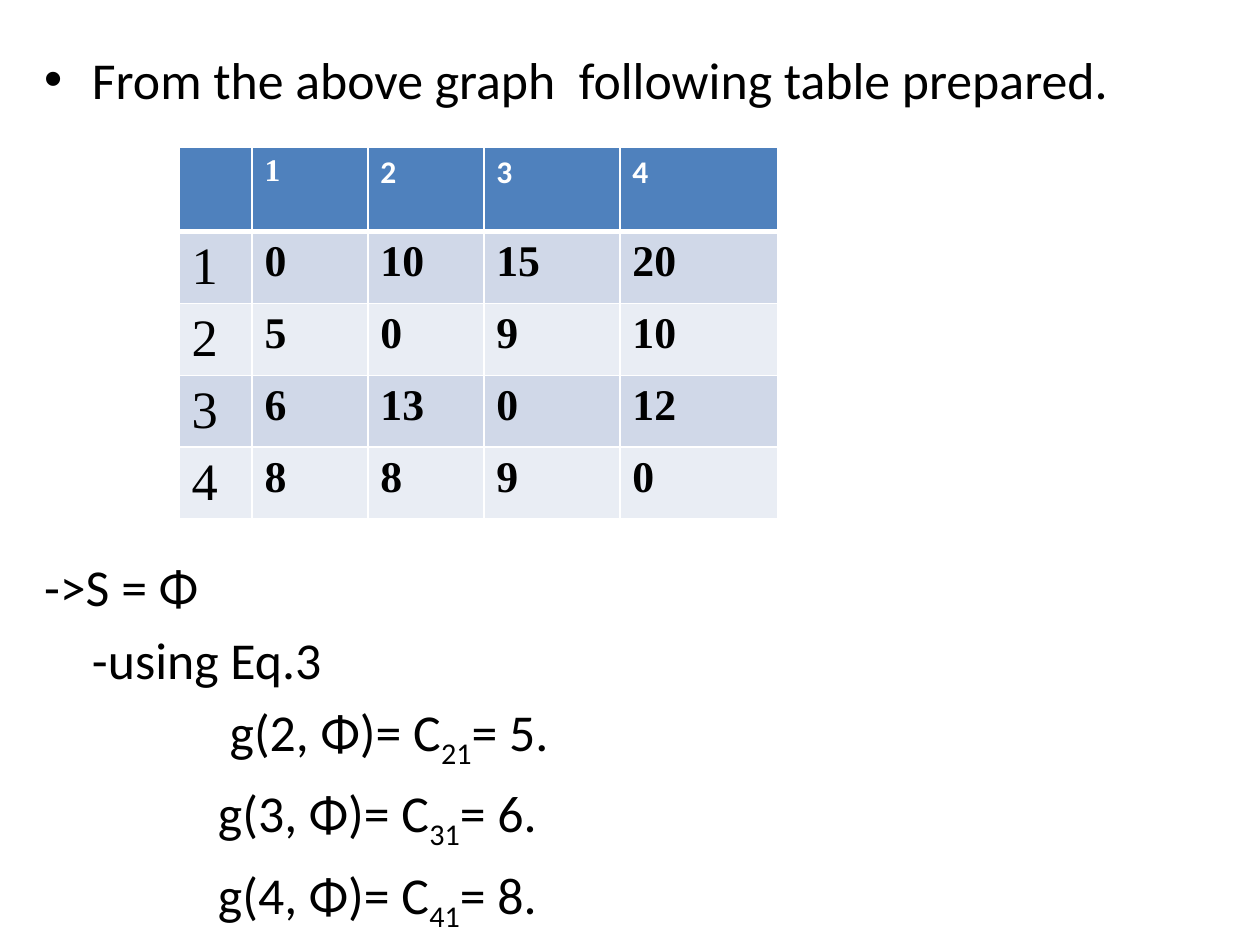
from pptx import Presentation
from pptx.dml.color import RGBColor
from pptx.enum.text import MSO_AUTO_SIZE, MSO_ANCHOR
from pptx.util import Inches, Pt
from lxml.etree import SubElement
from pptx.oxml.ns import qn


def style(r, size, color="000000", name="Calibri", bold=False):
    f = r.font
    f.size, f.name, f.bold = Pt(size), name, bold
    f.color.rgb = RGBColor.from_string(color)


def border(cell, side, width):
    ln = SubElement(cell._tc.get_or_add_tcPr(), qn(f"a:ln{side}"), w=str(Pt(width)))
    fill = SubElement(ln, qn("a:solidFill"))
    SubElement(fill, qn("a:srgbClr"), val="FFFFFF")


prs = Presentation()
prs.slide_width, prs.slide_height = Inches(10), Inches(7.5)
s = prs.slides.add_slide(prs.slide_layouts[1])
title = s.shapes.title
title._element.getparent().remove(title._element)

# Body text: (runs, left indent, space before); every second run is a subscript
lines = [
    (["From the above graph  following table prepared."], 0.38, 6),
    (["->S = Φ"], 0, 254),
    (["-using Eq.3"], 0.38, 6),
    ([" g(2, Φ)= C", "21", "= 5."], 1.38, 6),
    (["g(3, Φ)= C", "31", "= 6."], 1.38, 6),
    (["g(4, Φ)= C", "41", "= 8."], 1.38, 6),
]
body = s.placeholders[1]
body.left, body.top = Inches(0.25), Inches(0.33)
body.width, body.height = Inches(9.5), Inches(6.75)
tf = body.text_frame
tf.word_wrap = True
tf.auto_size = MSO_AUTO_SIZE.NONE
tf.vertical_anchor = MSO_ANCHOR.TOP
for i, (runs, indent, before) in enumerate(lines):
    p = tf.paragraphs[0] if i == 0 else tf.add_paragraph()
    p.space_before = Pt(before)
    pPr = p._p.get_or_add_pPr()
    pPr.set("marL", str(Inches(indent)))
    pPr.set("indent", str(Inches(-0.38 if i == 0 else 0)))
    if i:
        SubElement(pPr, qn("a:buNone"))
    for j, text in enumerate(runs):
        r = p.add_run()
        r.text = text
        style(r, 29.6)
        if j % 2:
            r.font._element.set("baseline", "-25000")

# Cost table
rows = [
    ["", "1", "2", "3", "4"],
    ["1", "0", "10", "15", "20"],
    ["2", "5", "0", "9", "10"],
    ["3", "6", "13", "0", "12"],
    ["4", "8", "8", "9", "0"],
]
widths = [0.58, 0.92, 0.92, 1.08, 1.25]
heights = [0.67] + [0.57] * 4
table = s.shapes.add_table(5, 5, Inches(1.42), Inches(1.17),
                           Inches(sum(widths)), Inches(sum(heights))).table
for i, (w, h) in enumerate(zip(widths, heights)):
    table.columns[i].width, table.rows[i].height = Inches(w), Inches(h)

for i, row in enumerate(rows):
    for j, text in enumerate(row):
        cell = table.cell(i, j)
        cell.margin_top, cell.margin_bottom = Inches(0.05), Inches(0.03)
        for side in "LRTB":
            under_header = (i, side) in ((0, "B"), (1, "T"))
            border(cell, side, 3 if under_header else 1)
        cell.fill.solid()
        color = "4F81BD" if i == 0 else "D0D8E8" if i % 2 else "E9EDF4"
        cell.fill.fore_color.rgb = RGBColor.from_string(color)
        cell.text_frame.text = text
        for r in cell.text_frame.paragraphs[0].runs:
            if i == 0:
                style(r, 18, "FFFFFF", "Times New Roman" if j == 1 else "Calibri", True)
            else:
                style(r, 25 if j else 30, name="Times New Roman", bold=j > 0)

prs.save("out.pptx")
